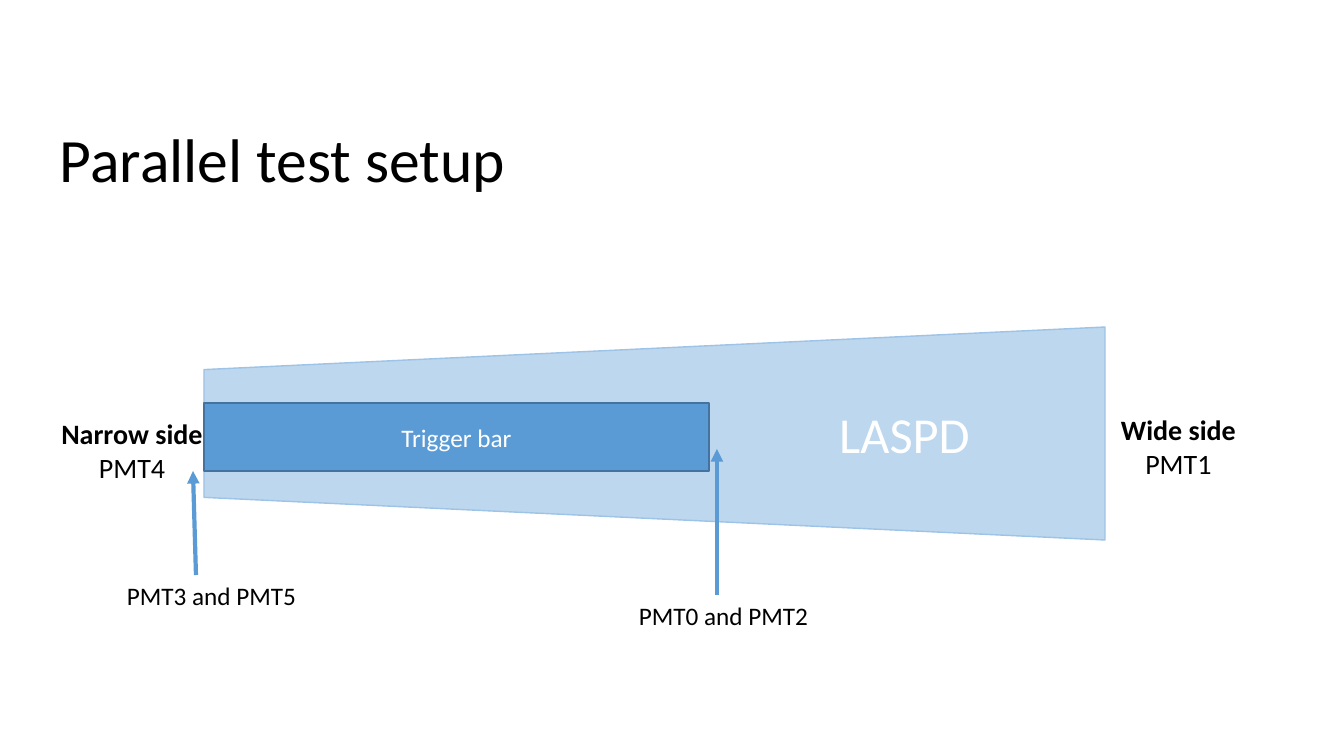
from lxml import etree
from pptx import Presentation
from pptx.dml.color import RGBColor
from pptx.enum.shapes import MSO_CONNECTOR, MSO_SHAPE
from pptx.enum.text import MSO_ANCHOR, PP_ALIGN
from pptx.oxml.ns import qn
from pptx.util import Emu, Pt

PX = 914400 / 100.8
FONT = "Calibri"
BLACK = RGBColor(0x00, 0x00, 0x00)
WHITE = RGBColor(0xFF, 0xFF, 0xFF)
BLUE = RGBColor(0x5B, 0x9B, 0xD5)
DARK_BLUE = RGBColor(0x43, 0x73, 0x9E)
PALE_BLUE = RGBColor(0xBD, 0xD7, 0xEE)
SOFT_BLUE = RGBColor(0x9D, 0xC3, 0xE6)
LEFT, CENTER = PP_ALIGN.LEFT, PP_ALIGN.CENTER
TOP, MIDDLE = MSO_ANCHOR.TOP, MSO_ANCHOR.MIDDLE
RECT = MSO_SHAPE.RECTANGLE
TRAPEZOID = MSO_SHAPE.FLOWCHART_MANUAL_OPERATION
STRAIGHT = MSO_CONNECTOR.STRAIGHT


def px(n):
    return Emu(round(n * PX))


def write(tf, text, size=18, color=BLACK, align=LEFT, anchor=TOP,
          bold_first=False, spacing=None, indent=0):
    """Fill a text frame, one paragraph for each line of text."""
    tf.word_wrap = True
    tf.vertical_anchor = anchor
    for i, line in enumerate(text.split("\n")):
        p = tf.add_paragraph() if i else tf.paragraphs[0]
        p.alignment = align
        if spacing:
            p.line_spacing = spacing
        if indent:
            p._p.get_or_add_pPr().set("marL", str(px(indent)))
        r = p.add_run()
        r.text = line
        r.font.name = FONT
        r.font.size = Pt(size)
        r.font.bold = bold_first and i == 0
        r.font.color.rgb = color


class Slide:
    def __init__(self, prs):
        self.shapes = prs.slides.add_slide(prs.slide_layouts[6]).shapes

    def text(self, x, y, w, h, text, **fmt):
        s = self.shapes.add_textbox(px(x), px(y), px(w), px(h))
        write(s.text_frame, text, **fmt)

    def turned(self, kind, x, y, w, h, text, fill, line, **fmt):
        """Draw a shape turned by 90° in the given visible box, its text level."""
        s = self.shapes.add_shape(kind, px(x + (w - h) / 2), px(y + (h - w) / 2),
                                  px(h), px(w))
        s.rotation = 90
        s.shadow.inherit = False
        s.fill.solid()
        s.fill.fore_color.rgb = fill
        s.line.color.rgb = line
        s.line.width = Pt(1)
        write(s.text_frame, text, color=WHITE, align=CENTER, anchor=MIDDLE, **fmt)
        s.text_frame._txBody.bodyPr.set("vert", "vert270")

    def arrow(self, x1, y1, x2, y2):
        s = self.shapes.add_connector(STRAIGHT, px(x1), px(y1), px(x2), px(y2))
        s.line.color.rgb = BLUE
        s.line.width = Pt(3)
        etree.SubElement(s.line._get_or_add_ln(), qn("a:tailEnd"), type="triangle")
        etree.SubElement(s._element.spPr, qn("a:effectLst"))


def main():
    prs = Presentation()
    prs.slide_width, prs.slide_height = px(1344), px(756)
    slide = Slide(prs)

    slide.text(50, 90, 1159, 146, "Parallel test setup",
               size=44, anchor=MIDDLE, spacing=0.9)

    slide.turned(TRAPEZOID, 204, 327, 901, 213, "LASPD", PALE_BLUE, SOFT_BLUE,
                 size=36, indent=500)
    slide.turned(RECT, 204, 403, 505, 68, "Trigger bar", BLUE, DARK_BLUE)

    side = dict(size=20, align=CENTER, bold_first=True)
    slide.text(50, 412, 164, 78, "Narrow side\nPMT4", **side)
    slide.text(1110, 408, 137, 78, "Wide side\nPMT1", **side)

    slide.text(629, 595, 238, 40, "PMT0 and PMT2")
    slide.text(117, 575, 238, 40, "PMT3 and PMT5")
    slide.arrow(196, 575, 193, 471)
    slide.arrow(717, 595, 717, 449)

    prs.save("out.pptx")


if __name__ == "__main__":
    main()
